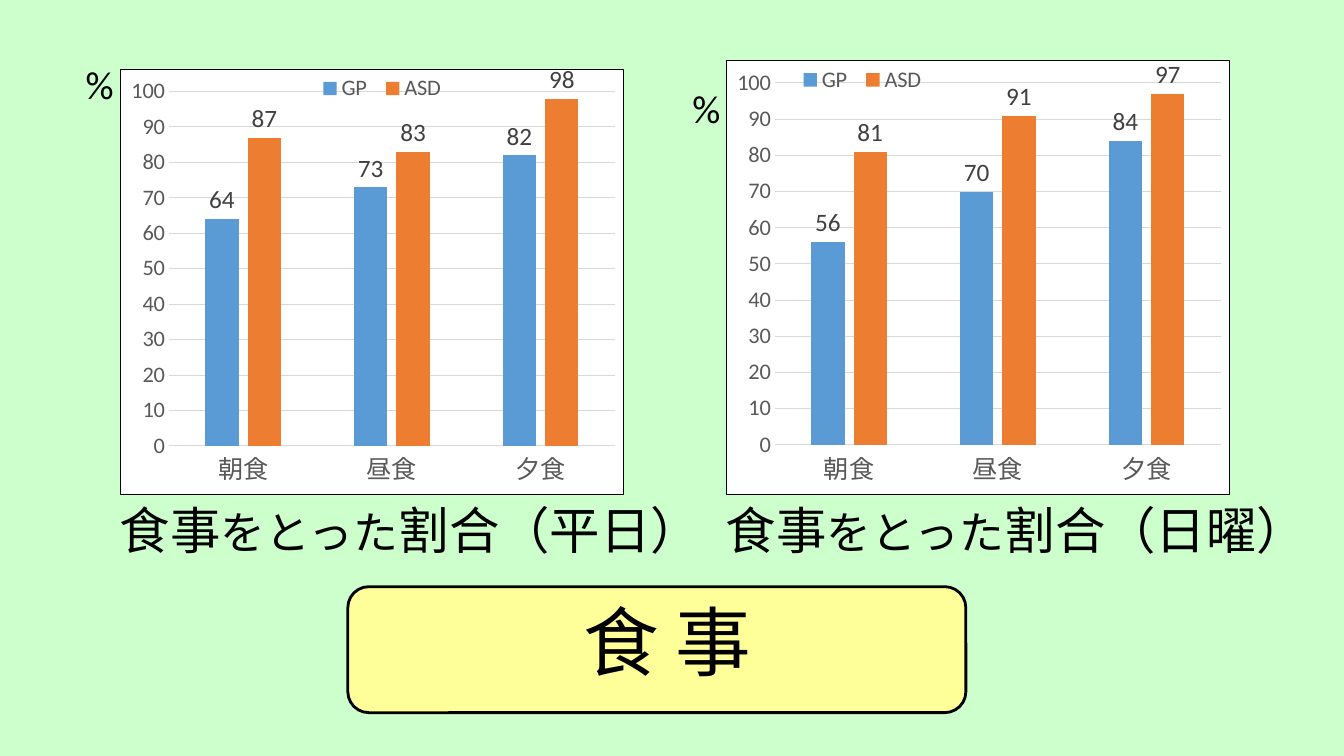
from lxml import etree
from pptx import Presentation
from pptx.chart.data import CategoryChartData
from pptx.dml.color import RGBColor
from pptx.enum.chart import XL_CHART_TYPE, XL_LABEL_POSITION, XL_LEGEND_POSITION, XL_TICK_MARK
from pptx.enum.shapes import MSO_SHAPE
from pptx.enum.text import MSO_ANCHOR, PP_ALIGN
from pptx.oxml import parse_xml
from pptx.oxml.ns import nsdecls, qn
from pptx.util import Inches, Pt

COLUMNS = XL_CHART_TYPE.COLUMN_CLUSTERED
OUTSIDE = XL_LABEL_POSITION.OUTSIDE_END
BOTTOM = XL_LEGEND_POSITION.BOTTOM
NO_TICK = XL_TICK_MARK.NONE
LEFT, CENTER = PP_ALIGN.LEFT, PP_ALIGN.CENTER

LATIN, JAPANESE = "Calibri", "Noto Sans CJK JP"
BLACK, GRAY, LABEL, GRID = "000000", "595959", "404040", "D9D9D9"
TITLE = "食 事"
MEALS = ["朝食", "昼食", "夕食"]
COLORS = {"GP": "5B9BD5", "ASD": "ED7D31"}
PANELS = [
    {"day": "平日", "left": 1.19, "top": 0.64, "unit": (0.75, 0.35), "legend_x": 0.38,
     "values": {"GP": (64, 73, 82), "ASD": (87, 83, 98)}},
    {"day": "日曜", "left": 7.2, "top": 0.59, "unit": (6.77, 0.59), "legend_x": 0.13,
     "values": {"GP": (56, 70, 84), "ASD": (81, 91, 97)}},
]
CHART_W, CHART_BOTTOM = 5, 4.91
CAPTION_TOP, CAPTION_W, LINE_H = 4.84, 6.2, 0.77
PLOT = (0.096, 0.052, 0.887, 0.834)


def rgb(color):
    return RGBColor.from_string(color)


def set_font(font, size, color=BLACK, name=LATIN):
    """Format a font, with the Japanese typeface for East Asian letters."""
    font.size, font.name = Pt(size), name
    font.color.rgb = rgb(color)
    latin = font._element.find(qn("a:latin")) if hasattr(font, "_element") else font._rPr.find(qn("a:latin"))
    ea = etree.Element(qn("a:ea"), typeface=JAPANESE)
    latin.addnext(ea)


def add_text(s, box, runs, align=LEFT, name=LATIN):
    """Add one bottom-anchored line made of (text, size) runs."""
    tf = s.shapes.add_textbox(*map(Inches, box)).text_frame
    tf.word_wrap, tf.vertical_anchor = True, MSO_ANCHOR.BOTTOM
    p = tf.paragraphs[0]
    p.alignment, p.line_spacing = align, 0.9
    for text, size in runs:
        r = p.add_run()
        r.text = text
        set_font(r.font, size, name=name)


def place(parent, x, y, w, h, before=None, inner=False):
    """Give a plot area or legend a manual layout, in shares of the chart."""
    for old in parent.findall(qn("c:layout")):
        parent.remove(old)
    target = '<c:layoutTarget val="inner"/>' if inner else ""
    sizes = "".join(f'<c:{k} val="{v}"/>' for k, v in zip("xywh", (x, y, w, h)))
    layout = parse_xml(
        f'<c:layout {nsdecls("c")}><c:manualLayout>{target}<c:xMode val="edge"/>'
        f'<c:yMode val="edge"/>{sizes}</c:manualLayout></c:layout>')
    if before is None:
        parent.insert(0, layout)
    else:
        before.addnext(layout)


def add_meal_chart(s, panel):
    data = CategoryChartData()
    data.categories = MEALS
    for name, values in panel["values"].items():
        data.add_series(name, values)
    box = (panel["left"], panel["top"], CHART_W, CHART_BOTTOM - panel["top"])
    chart = s.shapes.add_chart(COLUMNS, *map(Inches, box), data).chart
    chart.has_title = False
    set_font(chart.font, 10)

    plot = chart.plots[0]
    plot.gap_width, plot.overlap, plot.vary_by_categories = 219, -27, False
    for series in plot.series:
        series.format.fill.solid()
        series.format.fill.fore_color.rgb = rgb(COLORS[series.name])
        labels = series.data_labels
        labels.show_value, labels.position = True, OUTSIDE
        set_font(labels.font, 18, LABEL)

    meals, percent = chart.category_axis, chart.value_axis
    for axis, size in ((meals, 18), (percent, 16)):
        axis.major_tick_mark = axis.minor_tick_mark = NO_TICK
        set_font(axis.tick_labels.font, size, GRAY)
    percent.minimum_scale, percent.maximum_scale, percent.major_unit = 0, 100, 10
    percent.has_major_gridlines = True
    percent.format.line.fill.background()
    for line in (meals.format.line, percent.major_gridlines.format.line):
        line.color.rgb, line.width = rgb(GRID), Pt(0.75)

    chart.has_legend = True
    legend = chart.legend
    legend.position, legend.include_in_layout = BOTTOM, True
    set_font(legend.font, 16, GRAY)
    root = chart._chartSpace
    place(root.find(".//" + qn("c:plotArea")), *PLOT, inner=True)
    legend_xml = root.find(".//" + qn("c:legend"))
    place(legend_xml, panel["legend_x"], 0.005, 0.28, 0.08, before=legend_xml.find(qn("c:legendPos")))
    root.find(qn("c:chart")).addnext(parse_xml(
        f'<c:spPr {nsdecls("c", "a")}><a:solidFill><a:srgbClr val="FFFFFF"/></a:solidFill>'
        f'<a:ln w="9525"><a:solidFill><a:srgbClr val="{BLACK}"/></a:solidFill></a:ln></c:spPr>'))


prs = Presentation()
prs.slide_width, prs.slide_height = Inches(13.33), Inches(7.5)
s = prs.slides.add_slide(prs.slide_layouts[6])
s.background.fill.solid()
s.background.fill.fore_color.rgb = rgb("CCFFCC")

plate = s.shapes.add_shape(MSO_SHAPE.ROUNDED_RECTANGLE, *map(Inches, (3.45, 5.82, 6.13, 1.25)))
plate.shadow.inherit = False
plate.fill.solid()
plate.fill.fore_color.rgb = rgb("FFFF99")
plate.line.color.rgb, plate.line.width = rgb(BLACK), Pt(2)
add_text(s, (1.62, 5.61, 10, 1.25), [(TITLE, 54)], CENTER, JAPANESE)

for panel in PANELS:
    add_meal_chart(s, panel)
    caption = [("食事", 36), ("をとった", 32), (f"割合（{panel['day']}）", 36)]
    add_text(s, (panel["left"] - 0.1, CAPTION_TOP, CAPTION_W, LINE_H), caption)
    add_text(s, (*panel["unit"], 0.66, LINE_H), [("%", 28)])

prs.save("out.pptx")
